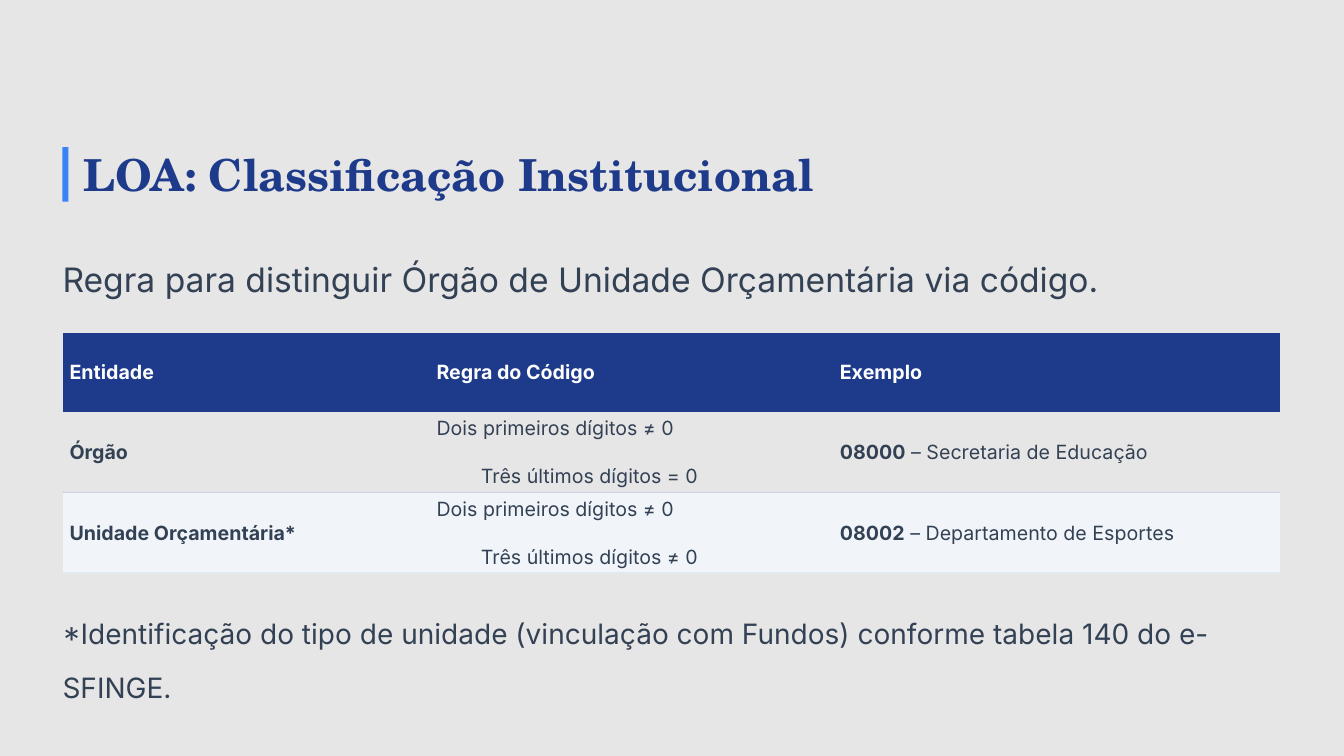
import pptx
import pptx.dml.color
import pptx.enum.shapes
import pptx.enum.text
import pptx.util

Inches = pptx.util.Inches
Pt = pptx.util.Pt

HEX = {
    "page": "E7E6E6", "navy": "1E3A8A", "bar": "3B82F6", "text": "334155",
    "white": "FFFFFF", "band": "F1F5F9", "rule": "CBD5E1",
}
SERIF, SANS = "TeX Gyre Schola", "Inter"
LEFT, WIDTH = 0.62, 12.08
COLS = [3.64, 4, 4.44]
ROWS = [0.79, 0.8, 0.8]
HEAD = ["Entidade", "Regra do Código", "Exemplo"]
# Entity, rule lines, code, name
UNITS = [
    ("Órgão", ["Dois primeiros dígitos ≠ 0", "Três últimos dígitos = 0"],
     "08000", " – Secretaria de Educação"),
    ("Unidade Orçamentária*",
     ["Dois primeiros dígitos ≠ 0", "Três últimos dígitos ≠ 0"],
     "08002", " – Departamento de Esportes"),
]


def color(key):
    return pptx.dml.color.RGBColor.from_string(HEX[key])


def apply(item, values):
    for key, value in values.items():
        setattr(item, key, value)


def add_run(para, text, size, tint="text", face=SANS, bold=False):
    run = para.add_run()
    run.text = text
    apply(run.font, {"size": Pt(size), "name": face, "bold": bold})
    run.font.color.rgb = color(tint)


def add_rect(slide, box, tint):
    rect = slide.shapes.add_shape(
        pptx.enum.shapes.MSO_SHAPE.RECTANGLE, *map(Inches, box))
    rect.shadow.inherit = False
    rect.fill.solid()
    rect.fill.fore_color.rgb = color(tint)
    rect.line.fill.background()


def add_text(slide, box, text, size, space=None, **style):
    frame = slide.shapes.add_textbox(*map(Inches, box)).text_frame
    apply(frame, {
        "margin_left": 0, "margin_top": 0, "margin_right": 0,
        "margin_bottom": 0, "word_wrap": True,
        "auto_size": pptx.enum.text.MSO_AUTO_SIZE.SHAPE_TO_FIT_TEXT,
    })
    para = frame.paragraphs[0]
    if space:
        para.line_spacing = space
    add_run(para, text, size, **style)


def add_title(slide, box):
    left, top, width, height = box
    add_text(slide, (left + 0.21, top, width, height),
             "LOA: Classificação Institucional", 31.5,
             tint="navy", face=SERIF, bold=True)
    add_rect(slide, (left, top, 0.06, height), "bar")


def fill_cell(cell, lines, fill=None, tint="text"):
    """Each line is a list of (text, bold) pairs."""
    apply(cell, {
        "margin_left": Inches(0.07), "margin_right": Inches(0.07),
        "margin_top": Inches(0.03), "margin_bottom": Inches(0.03),
        "vertical_anchor": pptx.enum.text.MSO_ANCHOR.MIDDLE,
    })
    if fill:
        cell.fill.solid()
        cell.fill.fore_color.rgb = color(fill)
    else:
        cell.fill.background()
    frame = cell.text_frame
    for i, line in enumerate(lines):
        para = frame.add_paragraph() if i else frame.paragraphs[0]
        if i:
            para.space_before = Pt(17)
            para._p.get_or_add_pPr().set("marL", str(Inches(0.44)))
        for text, bold in line:
            add_run(para, text, 14, tint, bold=bold)


def add_grid(slide, box):
    left, top = box[:2]
    table = slide.shapes.add_table(
        len(ROWS), len(COLS), *map(Inches, box)).table
    apply(table, {"first_row": False, "horz_banding": False})
    # Plain style without grid lines
    table._tbl.tblPr[0].text = "{2D5ABB26-0587-4C30-8999-92F81FD0307C}"
    for col, width in zip(table.columns, COLS):
        col.width = Inches(width)
    for row, height in zip(table.rows, ROWS):
        row.height = Inches(height)

    for c, text in enumerate(HEAD):
        fill_cell(table.cell(0, c), [[(text, True)]], "navy", "white")
    for r, (unit, rules, code, name) in enumerate(UNITS, 1):
        cells = [
            [[(unit, True)]],
            [[(rule, False)] for rule in rules],
            [[(code, True), (name, False)]],
        ]
        for c, lines in enumerate(cells):
            fill_cell(table.cell(r, c), lines, None if r % 2 else "band")


def add_rules(slide, box):
    left, top = box[:2]
    for r in range(2, len(ROWS) + 1):
        for c, width in enumerate(COLS):
            add_rect(slide, (left + sum(COLS[:c]),
                             top + sum(ROWS[:r]) - 0.01, width, 0.01), "rule")


def main():
    deck = pptx.Presentation()
    apply(deck, {"slide_width": Inches(13.33), "slide_height": Inches(7.5)})
    slide = deck.slides.add_slide(deck.slide_layouts[6])
    back = slide.background.fill
    back.solid()
    back.fore_color.rgb = color("page")

    # Title and lead
    add_title(slide, (LEFT, 1.46, 12.47, 0.54))
    add_text(slide, (LEFT, 2.33, WIDTH, 0.65),
             "Regra para distinguir Órgão de Unidade Orçamentária via código.",
             24, 1.6)

    # Table, footnote and row rules
    grid = (LEFT, 3.3, WIDTH, sum(ROWS))
    add_grid(slide, grid)
    add_text(slide, (LEFT, 5.92, WIDTH, 0.54),
             "*Identificação do tipo de unidade (vinculação com Fundos) "
             "conforme tabela 140 do e-SFINGE.", 20, 1.6)
    add_rules(slide, grid)
    deck.save("out.pptx")


if __name__ == "__main__":
    main()
